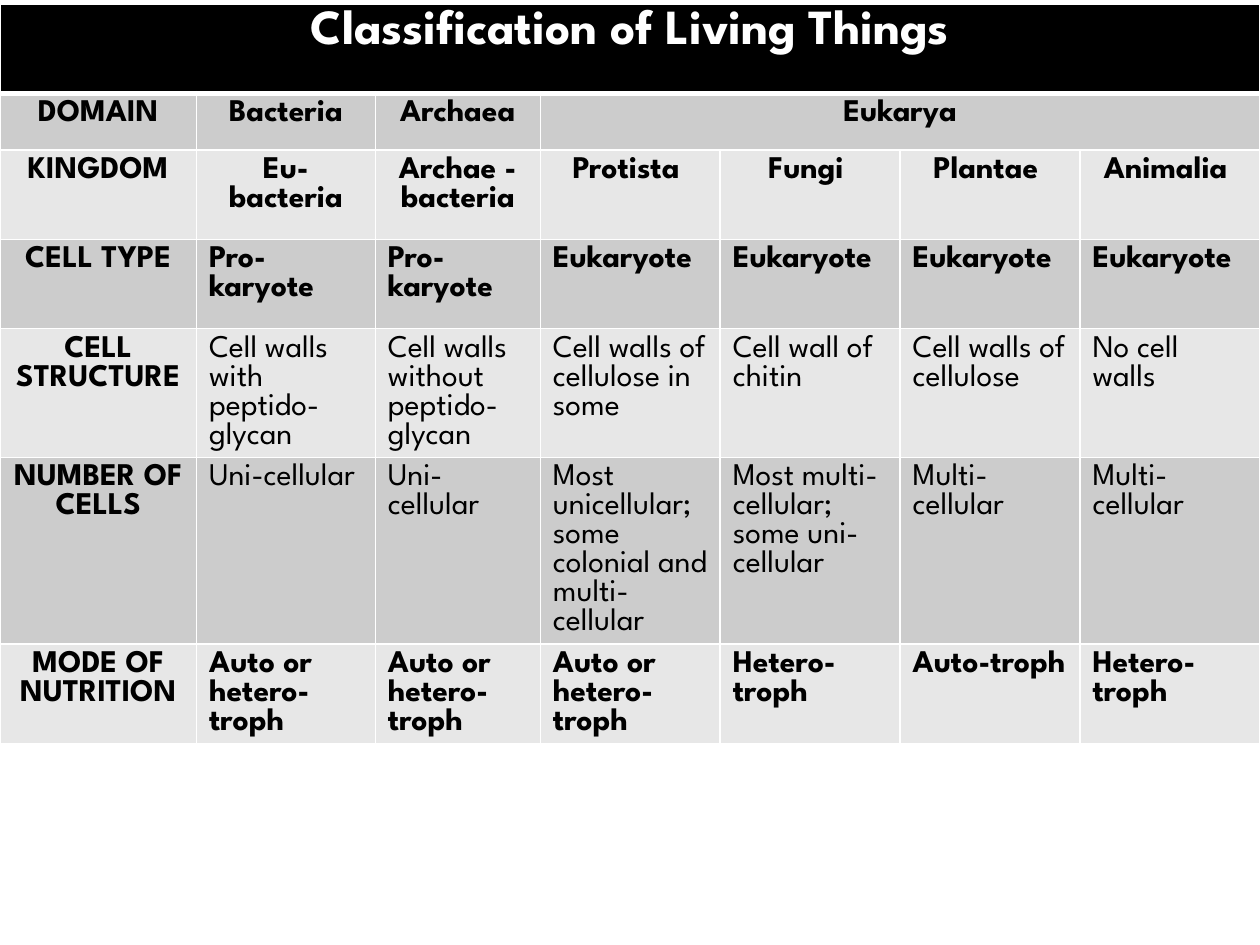
from lxml import etree
from pptx import Presentation
from pptx.dml.color import RGBColor
from pptx.enum import text as t
from pptx.oxml import ns
from pptx.util import Pt

FONT = "League Spartan"
HUES = {"head": "000000", "ink": "000000", "white": "FFFFFF",
        "dark": "CCCCCC", "light": "E7E7E7"}
TITLE = "Classification of Living Things"
ROWS = [
    ["DOMAIN", "Bacteria", "Archaea", "Eukarya"],
    ["KINGDOM", "Eu-bacteria", "Archae - bacteria",
     "Protista ", "Fungi ", "Plantae ", "Animalia "],
    ["CELL TYPE", "Pro-karyote", "Pro-karyote"] + ["Eukaryote"] * 4,
    ["CELL STRUCTURE", "Cell walls with peptido-glycan",
     "Cell walls without peptido-glycan", "Cell walls of cellulose in some",
     "Cell wall of chitin", "Cell walls of cellulose", "No cell walls"],
    ["NUMBER OF CELLS", "Uni-cellular", "Uni-cellular",
     "Most unicellular; some colonial and multi-cellular",
     "Most multi- cellular; some uni-cellular",
     "Multi-cellular", "Multi-cellular"],
    ["MODE OF NUTRITION"] + ["Auto or hetero- troph"] * 3
    + ["Hetero-troph", "Auto-troph", "Hetero-troph"],
]
PLAIN = {"CELL STRUCTURE", "NUMBER OF CELLS"}
CENTRED = {"DOMAIN", "KINGDOM"}
WIDTHS = [112.3, 102.2, 94.3] + [102.8] * 4
HEIGHTS = [51.1, 32.4] + [51.1] * 5
TOP = 2.2


def write(cell, words, size=18, color="ink", bold=True, center=False):
    para = cell.text_frame.paragraphs[0]
    para.alignment = t.PP_ALIGN.CENTER if center else t.PP_ALIGN.LEFT
    run = para.add_run()
    run.text = words
    font = run.font
    font.name, font.size, font.bold = FONT, Pt(size), bold
    font.color.rgb = RGBColor.from_string(HUES[color])


def edge(cell, side, width):
    props = cell._tc.get_or_add_tcPr()
    line = etree.SubElement(props, ns.qn("a:ln" + side), w=str(Pt(width)))
    fill = etree.SubElement(line, ns.qn("a:solidFill"))
    etree.SubElement(fill, ns.qn("a:srgbClr"), val=HUES["white"])


def paint(cell, row):
    for side in "LRTB":
        thick = (row, side) in {(0, "B"), (1, "T")}
        edge(cell, side, 3 if thick else 1)
    hue = "head" if row == 0 else "dark" if row % 2 else "light"
    cell.fill.solid()
    cell.fill.fore_color.rgb = RGBColor.from_string(HUES[hue])


def main():
    deck = Presentation()
    deck.slide_width, deck.slide_height = Pt(720), Pt(540)
    slide = deck.slides.add_slide(deck.slide_layouts[6])
    grid = slide.shapes.add_table(
        len(HEIGHTS), len(WIDTHS), 0, Pt(TOP),
        Pt(sum(WIDTHS)), Pt(sum(HEIGHTS))).table
    for col, width in zip(grid.columns, WIDTHS):
        col.width = Pt(width)
    for row, height in zip(grid.rows, HEIGHTS):
        row.height = Pt(height)
    for r in range(len(HEIGHTS)):
        for c in range(len(WIDTHS)):
            paint(grid.cell(r, c), r)
    last = len(WIDTHS) - 1
    grid.cell(0, 0).merge(grid.cell(0, last))
    grid.cell(1, 3).merge(grid.cell(1, last))

    write(grid.cell(0, 0), TITLE, size=28, color="white", center=True)
    for r, row in enumerate(ROWS, 1):
        label = row[0]
        for c, words in enumerate(row):
            write(grid.cell(r, c), words,
                  bold=c == 0 or label not in PLAIN,
                  center=c == 0 or label in CENTRED)
    deck.save("out.pptx")


if __name__ == "__main__":
    main()
